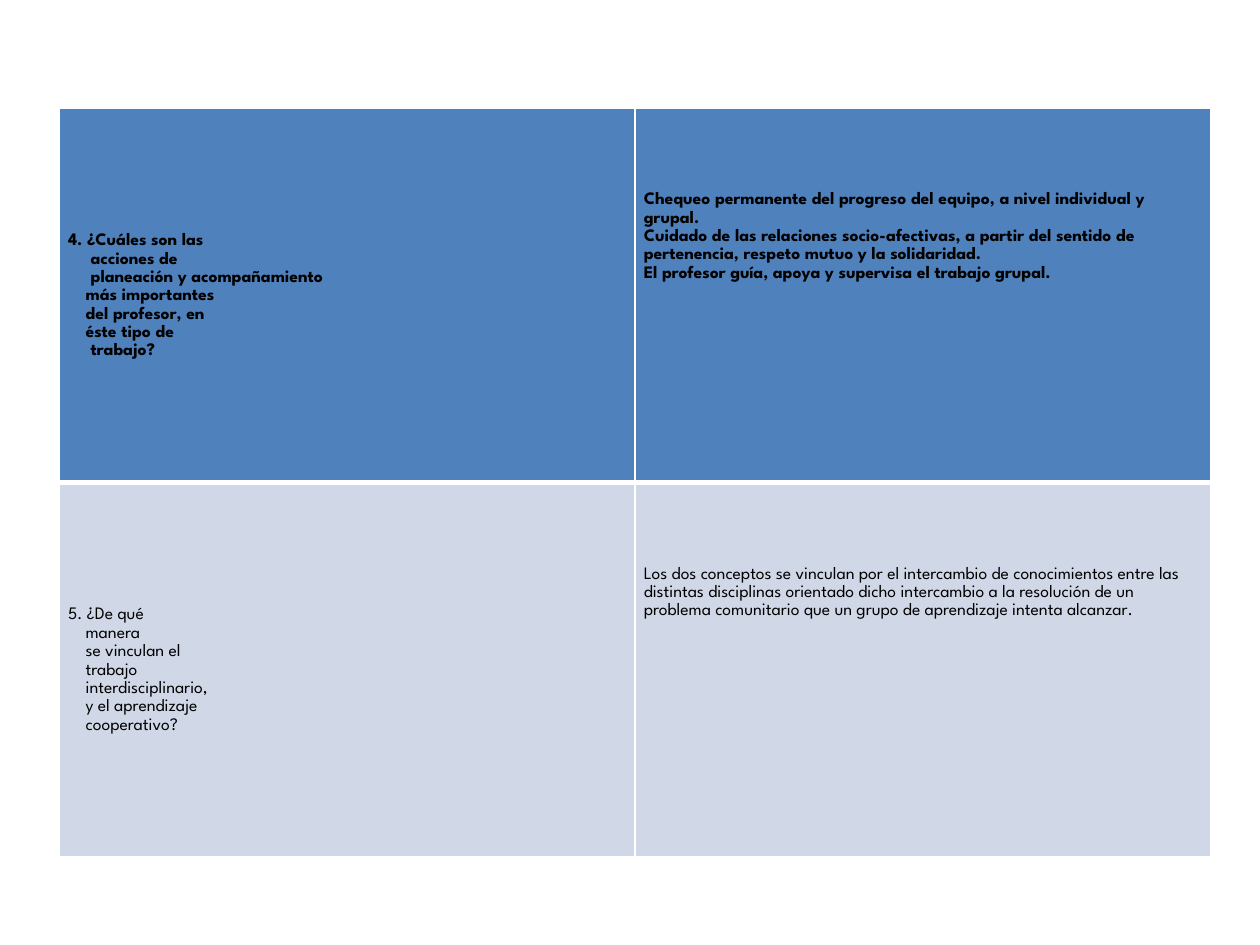
import pptx
import pptx.dml.color
import pptx.enum.text
import pptx.oxml
import pptx.oxml.ns
import pptx.util
from pptx.util import Inches

COLORS = {"header": "4F81BD", "body": "D0D8E8", "border": "FFFFFF", "text": "000000"}
BORDERS = {"header": {"L": 1, "R": 1, "T": 1, "B": 3},
           "body": {"L": 1, "R": 1, "T": 3, "B": 1}}
MARGIN = 0.07
ANSWER_TOP = 0.65  # answers start four lines below the cell top

# Each question line is (left indent in inches, text)
QUESTION_4 = [(0, "4. ¿Cuáles son las"), (0.18, "acciones de"),
              (0.18, "planeación y acompañamiento"), (0.14, "más importantes"),
              (0.14, "del profesor, en"), (0.14, "éste tipo de"), (0.18, "trabajo?")]
QUESTION_5 = [(0, "5. ¿De qué"), (0.14, "manera"), (0.14, "se vinculan el"),
              (0.14, "trabajo"), (0.14, "interdisciplinario,"),
              (0.14, "y el aprendizaje"), (0.14, "cooperativo?")]
ANSWER_4 = [
    (0, "Chequeo permanente del progreso del equipo, a nivel individual y grupal."),
    (0, "Cuidado de las relaciones socio-afectivas, a partir del sentido de "
        "pertenencia, respeto mutuo y la solidaridad."),
    (0, "El profesor guía, apoya y supervisa el trabajo grupal."),
]
ANSWER_5 = [
    (0, "Los dos conceptos se vinculan por el intercambio de conocimientos entre las "
        "distintas disciplinas orientado dicho intercambio a la resolución de un "
        "problema comunitario que un grupo de aprendizaje intenta alcanzar."),
]
ROWS = [("header", QUESTION_4, ANSWER_4), ("body", QUESTION_5, ANSWER_5)]


class SlideBuilder:
    font_format = {"name": "League Spartan", "size": pptx.util.Pt(10)}

    def __init__(self, slide):
        self.slide = slide

    def table(self, left, top, width, height, rows):
        shape = self.slide.shapes.add_table(
            len(rows), 2, Inches(left), Inches(top), Inches(width), Inches(height))
        table = shape.table
        table.first_row = table.horz_banding = False
        for row, (kind, question, answer) in enumerate(rows):
            self.cell(table.cell(row, 0), kind, question, MARGIN, "MIDDLE")
            self.cell(table.cell(row, 1), kind, answer, ANSWER_TOP, "TOP")

    def cell(self, cell, kind, lines, top_margin, anchor):
        cell_format = {
            "margin_left": Inches(MARGIN), "margin_right": Inches(MARGIN),
            "margin_top": Inches(top_margin), "margin_bottom": Inches(MARGIN),
            "vertical_anchor": pptx.enum.text.MSO_ANCHOR[anchor],
        }
        for name, value in cell_format.items():
            setattr(cell, name, value)
        self.borders(cell, BORDERS[kind])
        cell.fill.solid()
        cell.fill.fore_color.rgb = pptx.dml.color.RGBColor.from_string(COLORS[kind])
        frame = cell.text_frame
        for index, (indent, text) in enumerate(lines):
            paragraph = frame.add_paragraph() if index else frame.paragraphs[0]
            self.line(paragraph, text, indent, kind == "header")

    def line(self, paragraph, text, indent, bold):
        paragraph.line_spacing = 1.15
        if indent:
            paragraph._p.get_or_add_pPr().set("marL", str(Inches(indent)))
        run = paragraph.add_run()
        run.text = text
        for name, value in {**self.font_format, "bold": bold}.items():
            setattr(run.font, name, value)
        run.font.color.rgb = pptx.dml.color.RGBColor.from_string(COLORS["text"])

    def borders(self, cell, widths):
        properties = cell._tc.get_or_add_tcPr()
        for side, points in widths.items():
            properties.append(pptx.oxml.parse_xml(
                f'<a:ln{side} {pptx.oxml.ns.nsdecls("a")} w="{pptx.util.Pt(points)}">'
                f'<a:solidFill><a:srgbClr val="{COLORS["border"]}"/></a:solidFill>'
                f'</a:ln{side}>'))


def main():
    presentation = pptx.Presentation()
    presentation.slide_width = Inches(10)
    presentation.slide_height = Inches(7.5)
    slide = presentation.slides.add_slide(presentation.slide_layouts[6])

    # Questions on the left, answers on the right
    SlideBuilder(slide).table(0.47, 0.86, 9.14, 5.94, ROWS)
    presentation.save("out.pptx")


if __name__ == "__main__":
    main()
